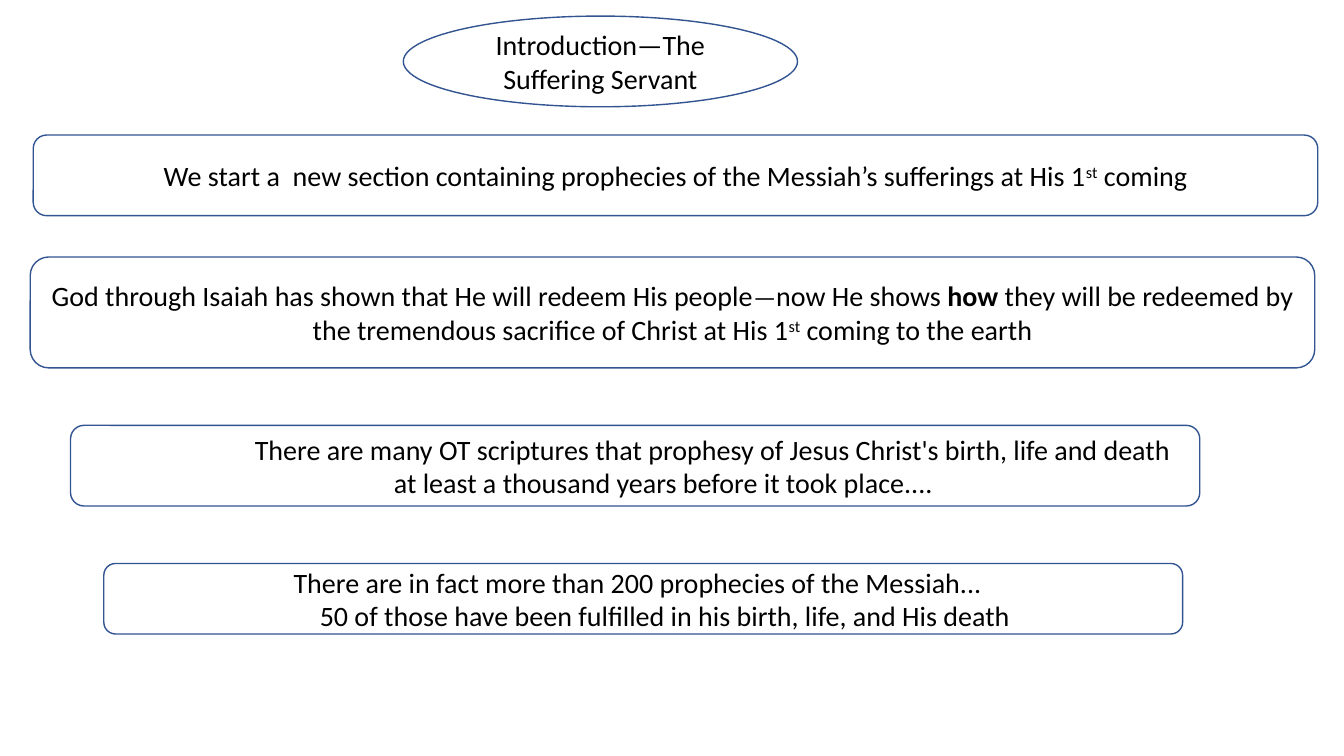
from dataclasses import dataclass

from pptx import Presentation
from pptx.dml.color import RGBColor
from pptx.enum.shapes import MSO_SHAPE as Shape
from pptx.enum.text import MSO_ANCHOR as Anchor, PP_ALIGN as Align
from pptx.util import Inches, Pt


@dataclass(frozen=True)
class Theme:
    font: str = "Calibri"
    size: Pt = Pt(20)
    dash_size: Pt = Pt(18)
    text: RGBColor = RGBColor(0, 0, 0)
    fill: RGBColor = RGBColor(0xFF, 0xFF, 0xFF)
    line: RGBColor = RGBColor(0x32, 0x54, 0x91)
    line_width: Pt = Pt(1)


THEME = Theme()

INTRO = [
    ("We start a  new section containing prophecies of the Messiah’s sufferings at His 1", ""),
    ("st", "super"),
    (" coming", ""),
]
REDEEMED = [
    ("God through Isaiah has shown that He will redeem His people", ""),
    ("—", "dash"),
    ("now He shows ", ""),
    ("how", "bold"),
    (" they will be redeemed by the tremendous sacrifice of Christ at His 1", ""),
    ("st", "super"),
    (" coming to the earth", ""),
]
SCRIPTURES = [
    (1.69, "There are many OT scriptures that prophesy of Jesus Christ's birth, life and death"),
    (3.07, "at least a thousand years before it took place...."),
]
FULFILLED = [
    (1.75, "There are in fact more than 200 prophecies of the Messiah..."),
    (2.01, "50 of those have been fulfilled in his birth, life, and His death"),
]


def format_paragraph(p, align):
    p.alignment = align
    p.font.name = THEME.font
    p.font.size = THEME.size
    p.font.color.rgb = THEME.text


def add_outline(s, kind, left, top, width, height):
    sp = s.shapes.add_shape(kind, Inches(left), Inches(top), Inches(width), Inches(height))
    sp.shadow.inherit = False
    sp.fill.solid()
    sp.fill.fore_color.rgb = THEME.fill
    sp.line.color.rgb = THEME.line
    sp.line.width = THEME.line_width
    tf = sp.text_frame
    tf.word_wrap = True
    tf.vertical_anchor = Anchor.MIDDLE
    return tf


def add_title(s, text, left, top, width, height):
    title = s.shapes.title
    title.left, title.top = Inches(left), Inches(top)
    title.width, title.height = Inches(width), Inches(height)
    tf = title.text_frame
    tf.text = text
    tf.word_wrap = True
    tf.vertical_anchor = Anchor.MIDDLE
    p = tf.paragraphs[0]
    p.line_spacing = 1.0
    format_paragraph(p, Align.CENTER)


def add_centred_box(s, runs, left, top, width, height):
    tf = add_outline(s, Shape.ROUNDED_RECTANGLE, left, top, width, height)
    p = tf.paragraphs[0]
    format_paragraph(p, Align.CENTER)
    for text, style in runs:
        r = p.add_run()
        r.text = text
        if style == "bold":
            r.font.bold = True
        elif style == "dash":
            r.font.size = THEME.dash_size
        elif style == "super":
            r._r.get_or_add_rPr().set("baseline", "30000")


def add_indented_box(s, lines, left, top, width, height):
    tf = add_outline(s, Shape.ROUNDED_RECTANGLE, left, top, width, height)
    for i, (indent, text) in enumerate(lines):
        p = tf.add_paragraph() if i else tf.paragraphs[0]
        p.text = text
        format_paragraph(p, Align.LEFT)
        p._p.get_or_add_pPr().set("marL", str(Inches(indent)))


def main():
    prs = Presentation()
    prs.slide_width, prs.slide_height = Inches(13.33), Inches(7.5)
    s = prs.slides.add_slide(prs.slide_layouts[5])

    add_outline(s, Shape.OVAL, 4, 0.16, 3.91, 0.9)
    add_title(s, "Introduction—The Suffering Servant", 4.57, 0.16, 2.77, 0.9)
    title = s.shapes.title._element
    title.getparent().append(title)

    add_centred_box(s, INTRO, 0.33, 1.34, 12.74, 0.8)
    add_centred_box(s, REDEEMED, 0.3, 2.55, 12.74, 1.1)
    add_indented_box(s, SCRIPTURES, 0.7, 4.22, 11.2, 0.8)
    add_indented_box(s, FULFILLED, 1.03, 5.59, 10.7, 0.7)

    prs.save("out.pptx")


if __name__ == "__main__":
    main()
